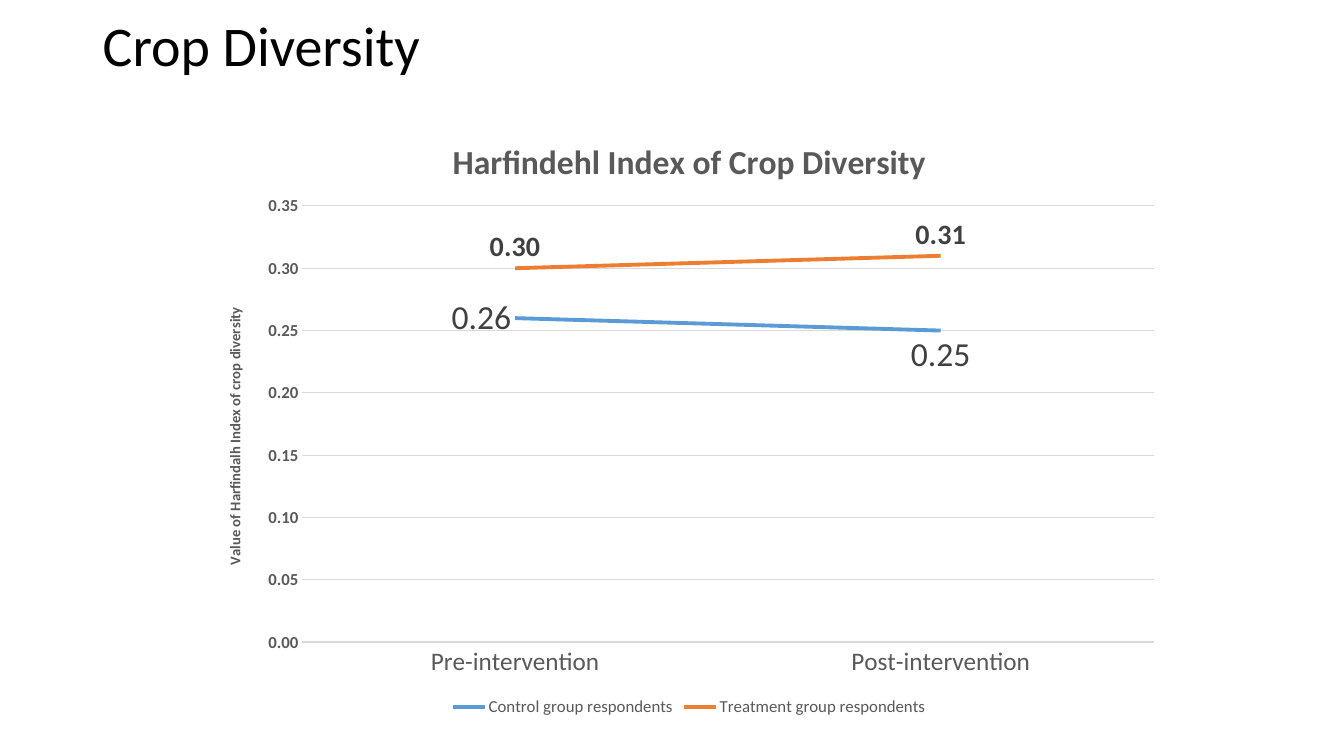
import lxml.etree
import pptx
import pptx.chart.data
import pptx.dml.color
import pptx.enum.chart
import pptx.oxml
import pptx.oxml.ns
import pptx.util

Cm, Pt = pptx.util.Cm, pptx.util.Pt
Position = pptx.enum.chart.XL_LABEL_POSITION

COLORS = {
    "title": "000000",
    "text": "595959",
    "label": "404040",
    "grid": "D9D9D9",
    "control": "5B9BD5",
    "treatment": "ED7D31",
}
PERIODS = ["Pre-intervention", "Post-intervention"]
CONTROL, TREATMENT = "Control group respondents", "Treatment group respondents"
INDEX = {CONTROL: [0.26, 0.25], TREATMENT: [0.30, 0.31]}
PLOT_AREA = {"x": 0.1, "y": 0.15, "w": 0.88, "h": 0.72}


class SlideBuilder:
    def __init__(self, prs, font):
        self.slide = prs.slides.add_slide(prs.slide_layouts[6])
        self.font = font

    def rgb(self, color):
        return pptx.dml.color.RGBColor.from_string(COLORS[color])

    def style(self, font, size, color="text", bold=False):
        font.name, font.size, font.bold = self.font, Pt(size), bold
        font.color.rgb = self.rgb(color)

    def line(self, line, color, width):
        line.color.rgb = self.rgb(color)
        line.width = Pt(width)

    def heading(self, text, left, top, width, height):
        s = self.slide.shapes.add_textbox(Cm(left), Cm(top), Cm(width), Cm(height))
        tf = s.text_frame
        tf.word_wrap = True
        tf.text = text
        p = tf.paragraphs[0]
        p.line_spacing, p.space_before = 0.9, Pt(10)
        self.style(p.runs[0].font, 40, "title")

    def chart_text(self, titled, text, size):
        """Give a chart or an axis a bold title."""
        titled.has_title = True
        tf = (titled.chart_title if hasattr(titled, "chart_title")
              else titled.axis_title).text_frame
        tf.text = text
        self.style(tf.paragraphs[0].runs[0].font, size, bold=True)

    def line_chart(self, left, top, width, height):
        data = pptx.chart.data.CategoryChartData(number_format="0.00")
        data.categories = PERIODS
        for name, values in INDEX.items():
            data.add_series(name, values)
        chart = self.slide.shapes.add_chart(
            pptx.enum.chart.XL_CHART_TYPE.LINE,
            Cm(left), Cm(top), Cm(width), Cm(height), data).chart
        self.style(chart.font, 10, "title")
        chart.has_legend = True
        chart.legend.position = pptx.enum.chart.XL_LEGEND_POSITION.BOTTOM
        chart.legend.include_in_layout = False
        self.style(chart.legend.font, 12)
        return chart

    def axes(self, chart):
        x, y = chart.category_axis, chart.value_axis
        for axis, size, bold in ((x, 18, False), (y, 12, True)):
            axis.major_tick_mark = pptx.enum.chart.XL_TICK_MARK.NONE
            self.style(axis.tick_labels.font, size, bold=bold)
        self.line(x.format.line, "grid", 1)
        y.format.line.fill.background()
        self.line(y.major_gridlines.format.line, "grid", 0.75)
        y.minimum_scale, y.maximum_scale, y.major_unit = 0, 0.35, 0.05
        y.tick_labels.number_format = "0.00"
        y.tick_labels.number_format_is_linked = False

    def series(self, series, color, label_size, bold=False, positions=()):
        series.smooth = False
        series.marker.style = pptx.enum.chart.XL_MARKER_STYLE.NONE
        self.line(series.format.line, color, 2.75)
        labels = series.data_labels
        labels.show_value = True
        labels.number_format, labels.number_format_is_linked = "0.00", False
        labels.position = Position.ABOVE
        self.style(labels.font, label_size, "label", bold)
        for i, position in enumerate(positions):
            label = series.points[i].data_label
            self.style(label.font, label_size, "label", bold)
            label.position = position

    def plot_layout(self, chart, fractions):
        """Fix the inner plot area as fractions of the chart."""
        qn = pptx.oxml.ns.qn
        area = chart.element.find(".//" + qn("c:plotArea"))
        for old in area.findall(qn("c:layout")):
            area.remove(old)
        layout = pptx.oxml.parse_xml(f"<c:layout {pptx.oxml.ns.nsdecls('c')}/>")
        manual = lxml.etree.SubElement(layout, qn("c:manualLayout"))
        settings = {"layoutTarget": "inner", "xMode": "edge", "yMode": "edge", **fractions}
        for name, value in settings.items():
            lxml.etree.SubElement(manual, qn(f"c:{name}")).set("val", str(value))
        area.insert(0, layout)


def main():
    prs = pptx.Presentation()
    prs.slide_width, prs.slide_height = Cm(33.87), Cm(19.05)
    builder = SlideBuilder(prs, "Calibri")
    builder.heading("Crop Diversity", 2.34, 0.33, 29.2, 2)
    chart = builder.line_chart(5.18, 2.9, 24.38, 15.27)
    builder.axes(chart)
    builder.chart_text(chart, "Harfindehl Index of Crop Diversity", 24)
    builder.chart_text(chart.value_axis, "Value of Harfindalh Index of crop diversity", 10.5)
    control, treatment = chart.plots[0].series
    builder.series(control, "control", 24, positions=(Position.LEFT, Position.BELOW))
    builder.series(treatment, "treatment", 20, bold=True)
    builder.plot_layout(chart, PLOT_AREA)
    prs.save("out.pptx")


if __name__ == "__main__":
    main()
